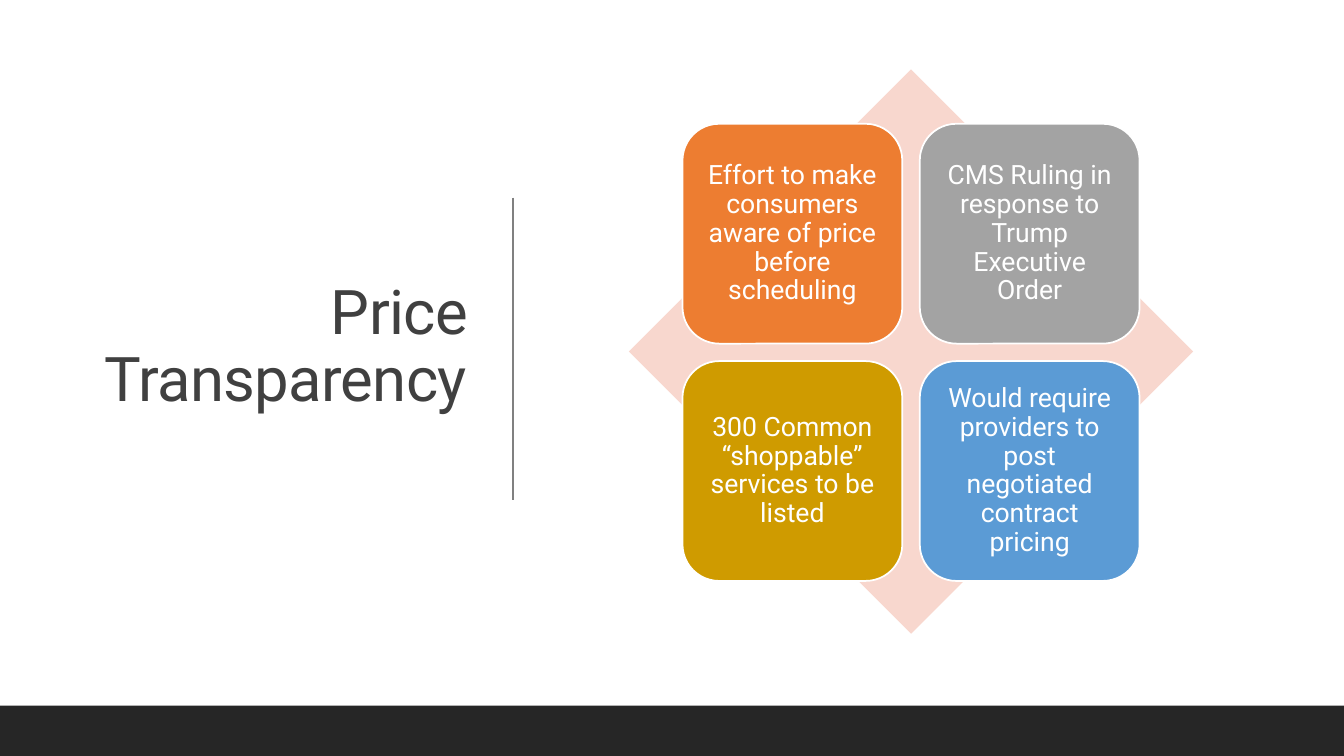
from lxml.etree import SubElement
from pptx import Presentation
from pptx.dml.color import RGBColor
from pptx.enum.shapes import MSO_CONNECTOR, MSO_SHAPE as SHAPE
from pptx.enum.text import MSO_ANCHOR as ANCHOR, PP_ALIGN as ALIGN
from pptx.oxml.ns import qn
from pptx.util import Cm, Pt

WHITE = RGBColor(0xFF, 0xFF, 0xFF)
DARK = RGBColor(0x26, 0x26, 0x26)
TITLE_GRAY = RGBColor(0x40, 0x40, 0x40)
RULE_GRAY = RGBColor(0x80, 0x80, 0x80)
PEACH = RGBColor(0xF8, 0xD7, 0xCE)
ORANGE = RGBColor(0xED, 0x7D, 0x31)
GRAY = RGBColor(0xA3, 0xA3, 0xA3)
GOLD = RGBColor(0xCF, 0x9B, 0x00)
BLUE = RGBColor(0x5B, 0x9B, 0xD5)

FONT = "Roboto"
SLIDE_W, SLIDE_H = 33.87, 19.05
TILE_LEFT, TILE_TOP = 17.2, 3.12
TILE_SIZE, TILE_PITCH = 5.54, 5.98

TILES = [
    ("Effort to make consumers aware of price before scheduling", ORANGE),
    ("CMS Ruling in response to Trump Executive Order", GRAY),
    ("300 Common “shoppable” services to be listed", GOLD),
    ("Would require providers to post negotiated contract pricing", BLUE),
]

TITLE_FRAME = {"word_wrap": True, "vertical_anchor": ANCHOR.MIDDLE}
TILE_FRAME = TITLE_FRAME | dict.fromkeys(
    ("margin_left", "margin_top", "margin_right", "margin_bottom"), Cm(0.2))


def set_attrs(obj, values):
    for name, value in values.items():
        setattr(obj, name, value)


def write_text(sp, text, frame, align, size, color):
    tf = sp.text_frame
    set_attrs(tf, frame)
    p = tf.paragraphs[0]
    set_attrs(p, {"alignment": align, "line_spacing": 0.9})
    r = p.add_run()
    r.text = text
    set_attrs(r.font, {"name": FONT, "size": Pt(size)})
    r.font.color.rgb = color
    return r


def add_block(s, kind, left, top, width, height, fill, outline=None):
    sp = s.shapes.add_shape(kind, Cm(left), Cm(top), Cm(width), Cm(height))
    sp.shadow.inherit = False
    sp.fill.solid()
    sp.fill.fore_color.rgb = fill
    if outline is None:
        sp.line.fill.background()
    else:
        sp.line.color.rgb = outline
        sp.line.width = Pt(1.25)
    return sp


def add_title(s, text):
    sp = s.shapes.add_textbox(Cm(1.78), Cm(1.75), Cm(10.24), Cm(14.05))
    r = write_text(sp, text, TITLE_FRAME, ALIGN.RIGHT, 44, TITLE_GRAY)
    r.font._element.set("spc", "-50")  # tightened letter spacing


def add_rule(s, x, top, bottom):
    rule = s.shapes.add_connector(
        MSO_CONNECTOR.STRAIGHT, Cm(x), Cm(top), Cm(x), Cm(bottom))
    rule.line.color.rgb = RULE_GRAY
    rule.line.width = Pt(1)
    SubElement(rule._element.spPr, qn("a:effectLst"))


def add_tile(s, index, text, fill):
    row, col = divmod(index, 2)
    sp = add_block(s, SHAPE.ROUNDED_RECTANGLE, TILE_LEFT + col * TILE_PITCH,
                   TILE_TOP + row * TILE_PITCH, TILE_SIZE, TILE_SIZE, fill, WHITE)
    write_text(sp, text, TILE_FRAME, ALIGN.CENTER, 19, WHITE)


def main():
    prs = Presentation()
    set_attrs(prs, {"slide_width": Cm(SLIDE_W), "slide_height": Cm(SLIDE_H)})
    s = prs.slides.add_slide(prs.slide_layouts[6])

    # Title side and footer band
    add_title(s, "Price Transparency")
    add_rule(s, 12.93, 4.98, 12.6)
    add_block(s, SHAPE.RECTANGLE, 0, 17.78, SLIDE_W, 1.27, DARK)

    # Four tiles over a diamond
    add_block(s, SHAPE.DIAMOND, 15.85, 1.75, 14.22, 14.22, PEACH)
    for index, (text, fill) in enumerate(TILES):
        add_tile(s, index, text, fill)

    prs.save("out.pptx")


if __name__ == "__main__":
    main()
